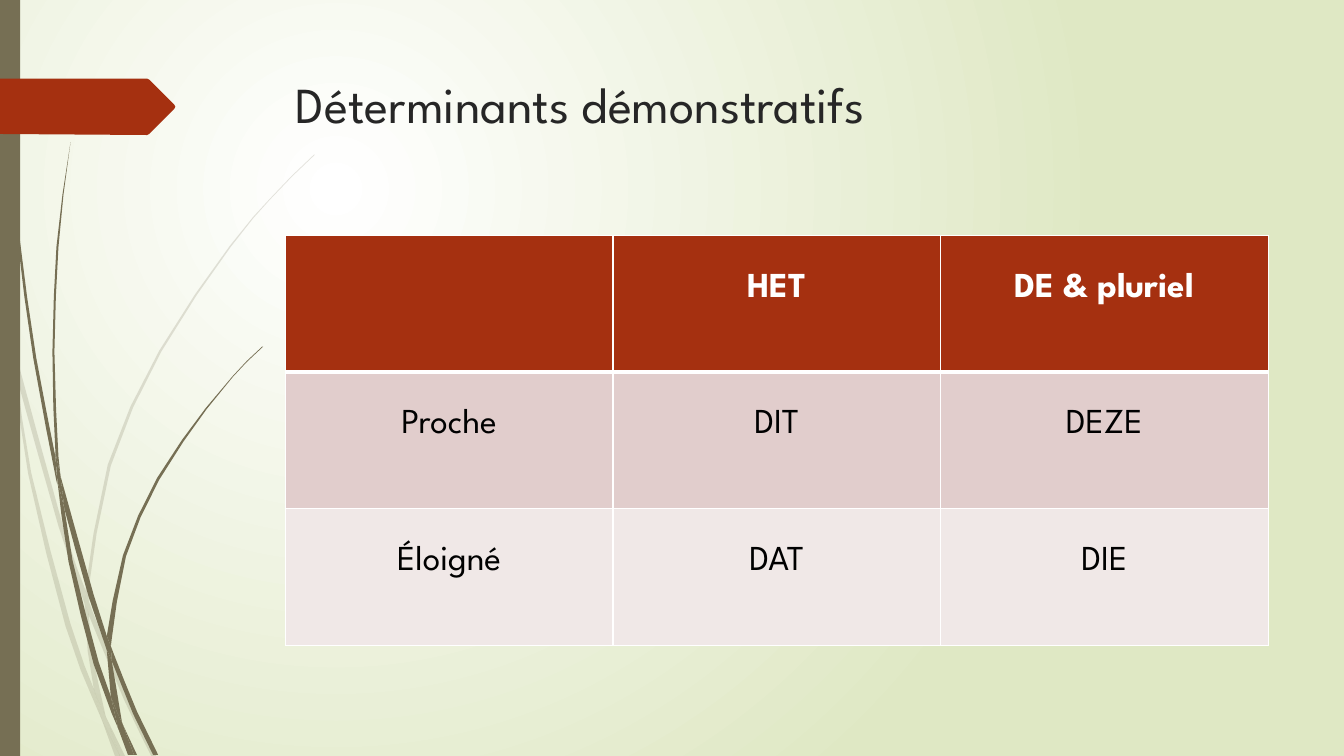
from math import dist

from lxml.etree import SubElement
from pptx import Presentation
from pptx.dml.color import RGBColor
from pptx.enum.shapes import MSO_SHAPE
from pptx.enum.text import MSO_ANCHOR, PP_ALIGN
from pptx.oxml.ns import qn
from pptx.util import Cm, Pt

FONT = "League Spartan"
WHITE = RGBColor(0xFF, 0xFF, 0xFF)
BLACK = RGBColor(0, 0, 0)
TITLE_GREY = RGBColor(0x26, 0x26, 0x26)
PALE_GREEN = RGBColor(0xDF, 0xE8, 0xC4)
OLIVE = RGBColor(0x76, 0x6F, 0x54)
RUST = RGBColor(0xA5, 0x30, 0x10)
ROSE = RGBColor(0xE1, 0xCD, 0xCC)
PALE_ROSE = RGBColor(0xF0, 0xE8, 0xE7)

TITLE = "Déterminants démonstratifs"
ROWS = [("", "HET", "DE & pluriel"),
        ("Proche", "DIT", "DEZE"),
        ("Éloigné", "DAT", "DIE")]
ROW_FILLS = [RUST, ROSE, PALE_ROSE]

# Points are in hundredths of an inch. Each blade of grass has two edges.
UNIT = Cm(0.0254)
FAINT_GRASS = [
    (((11, 350), (9, 322), (0, 282)), ((0, 299), (10, 344), (11, 350))),
    (((14, 345), (62, 520), (85, 586)), ((84, 599), (58, 522), (17, 376))),
    (((88, 596), (92, 607), (127, 692), (155, 750)),
     ((150, 750), (123, 694), (88, 610))),
    (((105, 711), (124, 750)), ((119, 750), (105, 711))),
    (((11, 350), (17, 376), (31, 469), (70, 619), (93, 683)),
     ((99, 707), (101, 714), (92, 693), (65, 621), (28, 470), (11, 350))),
    (((84, 599), (88, 608), (91, 646), (105, 711)),
     ((96, 692), (93, 683), (87, 646), (84, 599))),
    (((88, 596), (88, 584), (110, 462), (160, 349), (229, 245), (268, 198),
      (290, 175), (312, 154)),
     ((312, 153), (289, 175), (268, 197), (228, 244), (158, 348), (107, 461),
      (85, 584), (85, 586))),
    (((101, 714), (119, 750)), ((114, 750), (101, 714))),
    (((85, 586), (88, 596), (88, 610)), ((88, 608), (84, 599))),
    (((93, 683), (96, 692), (105, 711), (119, 750)),
     ((101, 714), (99, 707), (93, 683))),
]
DARK_GRASS = [
    (((4, 0), (5, 48), (8, 109), (19, 232), (36, 355), (55, 453), (57, 481)),
     ((56, 477), (33, 355), (17, 233), (7, 110), (4, 48), (3, 0))),
    (((60, 472), (93, 590), (106, 631)), ((106, 645), (88, 592), (64, 505))),
    (((110, 641), (113, 649), (136, 706), (157, 749)),
     ((152, 749), (132, 708), (111, 656))),
    (((57, 477), (64, 505), (72, 556), (98, 657), (110, 691)),
     ((116, 717), (117, 722), (111, 708), (93, 659), (68, 557), (57, 477))),
    (((60, 472), (58, 453), (54, 349), (58, 245), (63, 193), (70, 141)),
     ((70, 141), (62, 193), (56, 245), (52, 349), (55, 449), (60, 472))),
    (((122, 719), (136, 749)), ((133, 749), (122, 719))),
    (((55, 449), (60, 472), (64, 505)), ((57, 477), (55, 453), (55, 449))),
    (((110, 641), (111, 633), (125, 552), (158, 476), (205, 406), (231, 374),
      (245, 359), (261, 344)),
     ((260, 344), (245, 358), (231, 373), (204, 405), (156, 474), (122, 551),
      (106, 631))),
    (((117, 722), (131, 749)), ((127, 749), (117, 722))),
    (((106, 645), (109, 651), (111, 656), (121, 716), (122, 719)),
     ((116, 706), (110, 691), (106, 645))),
    (((106, 631), (110, 641), (111, 656)), ((109, 651), (106, 645))),
    (((110, 691), (116, 706), (122, 719), (133, 749)),
     ((130, 749), (117, 722), (116, 717), (110, 691))),
]
PENNANT = [(0, 78), (146, 78), (148, 79), (173, 104), (174, 106), (173, 108),
           (148, 133), (146, 134), (0, 133)]


def smooth(points):
    """Add the middle of each long step, on a Catmull-Rom curve."""
    padded = [points[0], *points, points[-1]]
    curve = [points[0]]
    for a, b, c, d in zip(padded, padded[1:], padded[2:], padded[3:]):
        if dist(b, c) > 60:
            curve.append(tuple((9 * (q + r) - p - u) / 16
                               for p, q, r, u in zip(a, b, c, d)))
        curve.append(c)
    return curve


def paint(sp, color):
    sp.shadow.inherit = False
    sp.fill.solid()
    sp.fill.fore_color.rgb = color
    sp.line.fill.background()


def add_outline(shapes, points, color):
    start, *rest = [(x * UNIT, y * UNIT) for x, y in points]
    builder = shapes.build_freeform(*start)
    builder.add_line_segments(rest, close=True)
    sp = builder.convert_to_shape()
    paint(sp, color)
    return sp


def add_grass(shapes, blades, opacity=100):
    group = shapes.add_group_shape()
    for down, up in blades:
        sp = add_outline(group.shapes, smooth(down) + smooth(up), OLIVE)
        if opacity < 100:
            color = sp._element.spPr.find(".//" + qn("a:srgbClr"))
            SubElement(color, qn("a:alpha"), val=str(opacity * 1000))


def set_borders(cell, widths):
    """Draw white borders, with widths in points for left, right, top, bottom."""
    tcPr = cell._tc.get_or_add_tcPr()
    for i, (side, width) in enumerate(zip("LRTB", widths)):
        ln = SubElement(tcPr, qn(f"a:ln{side}"), w=str(Pt(width)))
        SubElement(SubElement(ln, qn("a:solidFill")), qn("a:srgbClr"), val=str(WHITE))
        tcPr.insert(i, ln)


def set_background(s):
    fill = s.background.fill
    fill.gradient()
    for stop, color in zip(fill.gradient_stops, (WHITE, PALE_GREEN)):
        stop.color.rgb = color
    grad = s._element.find(".//" + qn("a:gradFill"))
    grad.remove(grad.find(qn("a:lin")))
    circle = SubElement(grad, qn("a:path"))
    circle.set("path", "circle")
    SubElement(circle, qn("a:fillToRect"), l="50000", t="50000", r="100000", b="100000")


def add_title(s):
    tf = s.shapes.add_textbox(Cm(7.21), Cm(1.73), Cm(24.77), Cm(3.56)).text_frame
    tf.word_wrap = True
    tf.vertical_anchor = MSO_ANCHOR.TOP
    p = tf.paragraphs[0]
    p.text = TITLE
    p.font.name, p.font.size = FONT, Pt(36)
    p.font.color.rgb = TITLE_GREY


def add_determiners(s):
    table = s.shapes.add_table(len(ROWS), len(ROWS[0]), Cm(7.19), Cm(5.93),
                               Cm(24.77), Cm(10.34)).table
    for i, (row, color) in enumerate(zip(ROWS, ROW_FILLS)):
        header = i == 0
        for j, text in enumerate(row):
            cell = table.cell(i, j)
            cell.fill.solid()
            cell.fill.fore_color.rgb = color
            cell.margin_top = Cm(0.94)
            set_borders(cell, (1, 1, 3 if i == 1 else 1, 3 if header else 1))
            p = cell.text_frame.paragraphs[0]
            p.text = text
            p.alignment = PP_ALIGN.CENTER
            p.font.name, p.font.size, p.font.bold = FONT, Pt(25), header
            p.font.color.rgb = WHITE if header else BLACK


def main():
    prs = Presentation()
    prs.slide_width, prs.slide_height = Cm(33.87), Cm(19.05)
    s = prs.slides.add_slide(prs.slide_layouts[6])
    set_background(s)
    add_grass(s.shapes, FAINT_GRASS, opacity=20)
    add_grass(s.shapes, DARK_GRASS)
    paint(s.shapes.add_shape(MSO_SHAPE.RECTANGLE, 0, 0, Cm(0.51), prs.slide_height), OLIVE)
    add_outline(s.shapes, PENNANT, RUST)
    add_title(s)
    add_determiners(s)
    prs.save("out.pptx")


if __name__ == "__main__":
    main()
